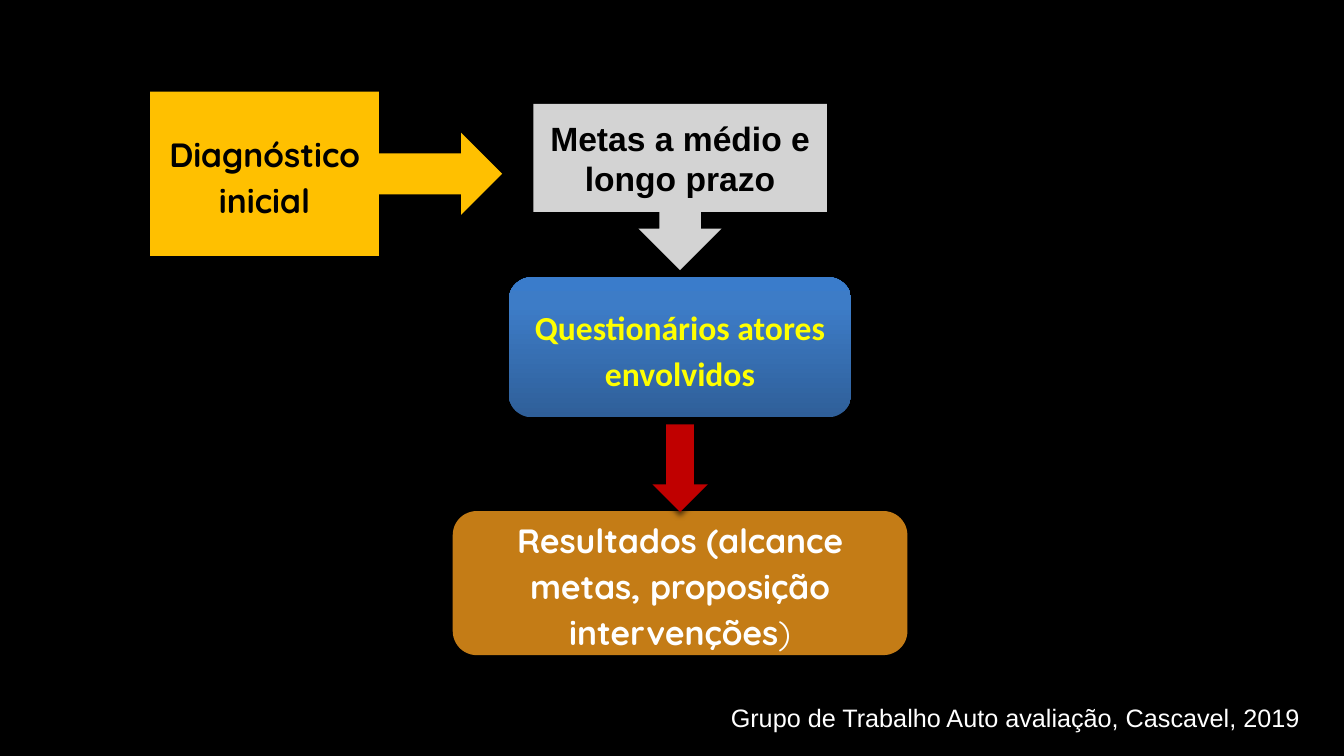
from copy import deepcopy
from lxml import etree
from pptx import Presentation
from pptx import util as u
from pptx.dml.color import RGBColor
from pptx.enum import shapes, text
from pptx.oxml.ns import qn

WIDE, HIGH = 13.33, 7.5
AXIS = 6.745  # shared centre line of the vertical flow
KIND = shapes.MSO_SHAPE
SOFT, DEEP = (35, 3.1, 1.8), (60, 4, 3)  # shadow: opacity %, blur pt, distance pt
BLUES = [(0, "2F5F99"), (0.8, "3D7CC7"), (1, "3A7CCB")]
LOOSE = {"lead": 1.15, "after": 10}

# kind, centre x, top, width, height, fill, shadow, runs (words, bold), text format
STEPS = [
    (KIND.ROUNDED_RECTANGLE, AXIS, 5.07, 4.51, 1.43, "C47C16", DEEP,
     [("Resultados (alcance metas, proposição intervenções", True), (")", False)],
     {"font": "Quicksand", "tint": "FFFFFF", **LOOSE}),
    (KIND.DOWN_ARROW, AXIS, 4.21, 0.55, 0.87, "C00000", DEEP, [], {}),
    (KIND.DOWN_ARROW_CALLOUT, AXIS, 1.03, 2.91, 1.65, "D3D3D3", DEEP,
     [("Metas a médio e longo prazo", True)], {"font": "Arial"}),
    (KIND.ROUNDED_RECTANGLE, AXIS, 2.75, 3.4, 1.39, BLUES, SOFT,
     [("Questionários atores envolvidos", True)],
     {"font": "Calibri", "tint": "FFFF00", **LOOSE}),
    (KIND.RIGHT_ARROW_CALLOUT, 3.235, 0.91, 3.49, 1.63, "FFC000", SOFT,
     [("Diagnóstico inicial", True)], {"font": "Quicksand", **LOOSE}),
]
CREDIT = "Grupo de Trabalho Auto avaliação, Cascavel, 2019"


def color(code):
    return RGBColor.from_string(code)


def write(shape, runs, font="Arial", size=24, tint="000000", lead=None, after=None,
          align=text.PP_ALIGN.CENTER, wrap=True):
    frame = shape.text_frame
    frame.word_wrap = wrap
    para = frame.paragraphs[0]
    para.alignment = align
    if lead:
        para.line_spacing = lead
    if after:
        para.space_after = u.Pt(after)
    for words, bold in runs:
        run = para.add_run()
        run.text = words
        run.font.name, run.font.size, run.font.bold = font, u.Pt(size), bold
        run.font.color.rgb = color(tint)


def paint(shape, fill):
    """Fill with one colour, or with a gradient rising from the bottom."""
    if isinstance(fill, str):
        shape.fill.solid()
        shape.fill.fore_color.rgb = color(fill)
        return
    shape.fill.gradient()
    shape.fill.gradient_angle = 90
    stops = next(shape._element.iter(qn("a:gsLst")))
    while len(stops) < len(fill):
        stops.append(deepcopy(stops[0]))
    for stop, (place, code) in zip(shape.fill.gradient_stops, fill):
        stop.position, stop.color.rgb = place, color(code)


def shade(shape, alpha, blur, dist):
    shape.shadow.inherit = False
    effects = next(shape._element.iter(qn("a:effectLst")))
    cast = etree.SubElement(effects, qn("a:outerShdw"), blurRad=str(u.Pt(blur)),
                            dist=str(u.Pt(dist)), dir="5400000", rotWithShape="0")
    tone = etree.SubElement(cast, qn("a:srgbClr"), val="000000")
    etree.SubElement(tone, qn("a:alpha"), val=str(alpha * 1000))


def main():
    deck = Presentation()
    deck.slide_width, deck.slide_height = u.Inches(WIDE), u.Inches(HIGH)
    slide = deck.slides.add_slide(deck.slide_layouts[6])
    slide.background.fill.solid()
    slide.background.fill.fore_color.rgb = color("000000")

    for kind, mid, top, wide, high, fill, shadow, runs, style in STEPS:
        box = [u.Inches(n) for n in (mid - wide / 2, top, wide, high)]
        step = slide.shapes.add_shape(kind, *box)
        paint(step, fill)
        step.line.fill.background()
        shade(step, *shadow)
        if runs:
            step.text_frame.vertical_anchor = text.MSO_ANCHOR.MIDDLE
            write(step, runs, **style)

    note = slide.shapes.add_textbox(*[u.Inches(n) for n in (7.15, 6.92, 5.9, 0.4)])
    note.text_frame.auto_size = text.MSO_AUTO_SIZE.SHAPE_TO_FIT_TEXT
    write(note, [(CREDIT, False)], size=18, tint="FFFFFF",
          align=text.PP_ALIGN.LEFT, wrap=False)
    deck.save("out.pptx")


if __name__ == "__main__":
    main()
